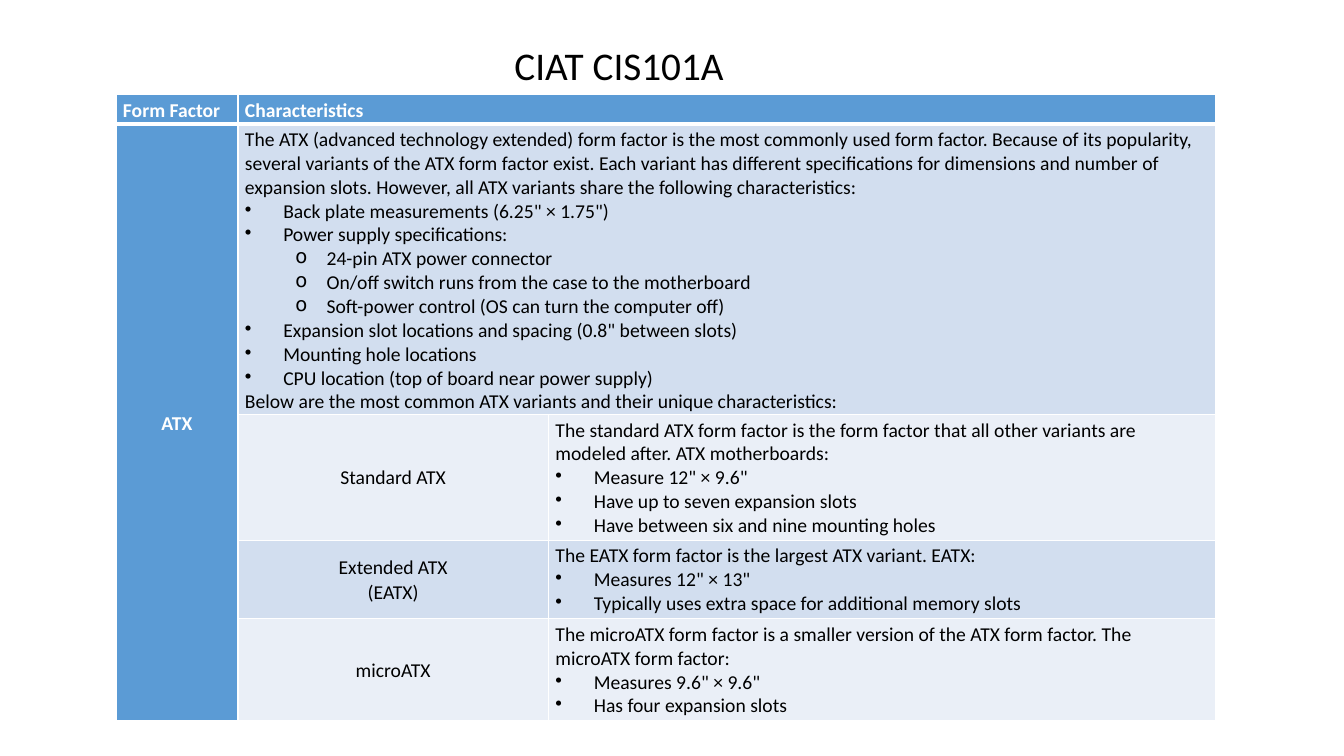
"""Build a slide with a table of ATX motherboard form factors."""
from lxml.etree import SubElement
from pptx import Presentation
from pptx.dml.color import RGBColor
from pptx.enum.text import MSO_ANCHOR, MSO_AUTO_SIZE, PP_ALIGN
from pptx.oxml.ns import qn
from pptx.util import Inches, Pt

WHITE = RGBColor(0xFF, 0xFF, 0xFF)
BLACK = RGBColor(0x00, 0x00, 0x00)
BLUE = RGBColor(0x5B, 0x9B, 0xD5)
BAND_DARK = RGBColor(0xD2, 0xDE, 0xEF)
BAND_LIGHT = RGBColor(0xEA, 0xEF, 0xF7)

FONT = "Calibri"
COLS = (1.21, 3.08, 6.62)
ROWS = (0.28, 2.87, 1.24, 0.78, 1.0)
BULLETS = {"•": (0, 0.38, 0.38, 0.5), "o": (1, 0.81, 0.31, 1)}

ATX = [
    ("", "The ATX (advanced technology extended) form factor is the most commonly used "
         "form factor. Because of its popularity, several variants of the ATX form factor "
         "exist. Each variant has different specifications for dimensions and number of "
         "expansion slots. However, all ATX variants share the following characteristics:"),
    ("•", 'Back plate measurements (6.25" × 1.75")'),
    ("•", "Power supply specifications:"),
    ("o", "24-pin ATX power connector"),
    ("o", "On/off switch runs from the case to the motherboard"),
    ("o", "Soft-power control (OS can turn the computer off)"),
    ("•", 'Expansion slot locations and spacing (0.8" between slots)'),
    ("•", "Mounting hole locations"),
    ("•", "CPU location (top of board near power supply)"),
    ("", "Below are the most common ATX variants and their unique characteristics:"),
]
VARIANTS = [
    (["Standard ATX"], [
        ("", "The standard ATX form factor is the form factor that all other variants are "
             "modeled after. ATX motherboards:"),
        ("•", 'Measure 12" × 9.6"'),
        ("•", "Have up to seven expansion slots"),
        ("•", "Have between six and nine mounting holes")]),
    (["Extended ATX", "(EATX)"], [
        ("", "The EATX form factor is the largest ATX variant. EATX:"),
        ("•", 'Measures 12" × 13"'),
        ("•", "Typically uses extra space for additional memory slots")]),
    (["microATX"], [
        ("", "The microATX form factor is a smaller version of the ATX form factor. "
             "The microATX form factor:"),
        ("•", 'Measures 9.6" × 9.6"'),
        ("•", "Has four expansion slots")]),
]


def add_run(p, text, size=14, color=BLACK, bold=False):
    """Add one formatted run to a paragraph."""
    r = p.add_run()
    r.text = text
    r.font.name, r.font.size, r.font.bold = FONT, Pt(size), bold
    r.font.color.rgb = color


def add_bullet(p, mark):
    """Give a paragraph a bullet, a hanging indent and a tab stop."""
    level, left, hang, tab = BULLETS[mark]
    p.level = level
    pPr = p._p.get_or_add_pPr()
    pPr.set("marL", str(Inches(left)))
    pPr.set("indent", str(-Inches(hang)))
    SubElement(pPr, qn("a:buChar"), char=mark)
    tabs = SubElement(pPr, qn("a:tabLst"))
    SubElement(tabs, qn("a:tab"), pos=str(Inches(tab)), algn="l")


def style_cell(cell, fill, pad, bottom=1):
    """Set the borders, fill, margins and anchor of a cell."""
    tcPr = cell._tc.get_or_add_tcPr()
    for side, width in (("L", 1), ("R", 1), ("T", 1), ("B", bottom)):
        ln = SubElement(tcPr, qn(f"a:ln{side}"), w=str(Pt(width)))
        SubElement(SubElement(ln, qn("a:solidFill")), qn("a:srgbClr"), val=str(WHITE))
    cell.fill.solid()
    cell.fill.fore_color.rgb = fill
    cell.margin_left = cell.margin_right = Inches(0.07)
    cell.margin_top = cell.margin_bottom = Inches(pad)
    cell.vertical_anchor = MSO_ANCHOR.MIDDLE


def add_label(cell, lines, align=PP_ALIGN.CENTER, color=BLACK, bold=False):
    """Write a label, with line breaks between its lines."""
    p = cell.text_frame.paragraphs[0]
    p.alignment, p.line_spacing = align, 1.07
    for i, line in enumerate(lines):
        if i:
            p.add_line_break()
        add_run(p, line, color=color, bold=bold)


def add_details(cell, items):
    """Write plain and bulleted paragraphs into a cell."""
    tf = cell.text_frame
    for i, (mark, text) in enumerate(items):
        p = tf.add_paragraph() if i else tf.paragraphs[0]
        if mark:
            add_bullet(p, mark)
        add_run(p, text)


def add_title(s, text):
    """Add the centred title."""
    tf = s.shapes.add_textbox(Inches(4.99), Inches(0.36), Inches(2.3), Inches(0.57)).text_frame
    tf.word_wrap, tf.auto_size = False, MSO_AUTO_SIZE.SHAPE_TO_FIT_TEXT
    p = tf.paragraphs[0]
    p.alignment = PP_ALIGN.CENTER
    add_run(p, text, size=28)


def add_grid(s):
    """Add the table with its sizes, fills and merged cells."""
    table = s.shapes.add_table(len(ROWS), len(COLS), Inches(1.15), Inches(0.94),
                               Inches(sum(COLS)), Inches(sum(ROWS))).table
    table.first_row = table.horz_banding = False
    for column, width in zip(table.columns, COLS):
        column.width = Inches(width)
    for y, height in enumerate(ROWS):
        table.rows[y].height = Inches(height)
        band = BAND_DARK if y % 2 else BAND_LIGHT
        for x in range(len(COLS)):
            detail = y and (x == 2 or (x == 1 and y == 1))
            style_cell(table.cell(y, x), band if x and y else BLUE,
                       0.04 if detail else 0.02, 1 if y else 3)
    table.cell(0, 1).merge(table.cell(0, 2))
    table.cell(1, 0).merge(table.cell(4, 0))
    table.cell(1, 1).merge(table.cell(1, 2))
    return table


def main():
    """Create and save the slide."""
    prs = Presentation()
    prs.slide_width, prs.slide_height = Inches(13.33), Inches(7.5)
    s = prs.slides.add_slide(prs.slide_layouts[6])
    add_title(s, "CIAT CIS101A")
    table = add_grid(s)
    for x, heading in enumerate(("Form Factor", "Characteristics")):
        add_label(table.cell(0, x), [heading], PP_ALIGN.LEFT, WHITE, True)
    add_label(table.cell(1, 0), ["ATX"], color=WHITE, bold=True)
    add_details(table.cell(1, 1), ATX)
    for y, (name, items) in enumerate(VARIANTS, start=2):
        add_label(table.cell(y, 1), name)
        add_details(table.cell(y, 2), items)
    prs.save("out.pptx")


if __name__ == "__main__":
    main()
